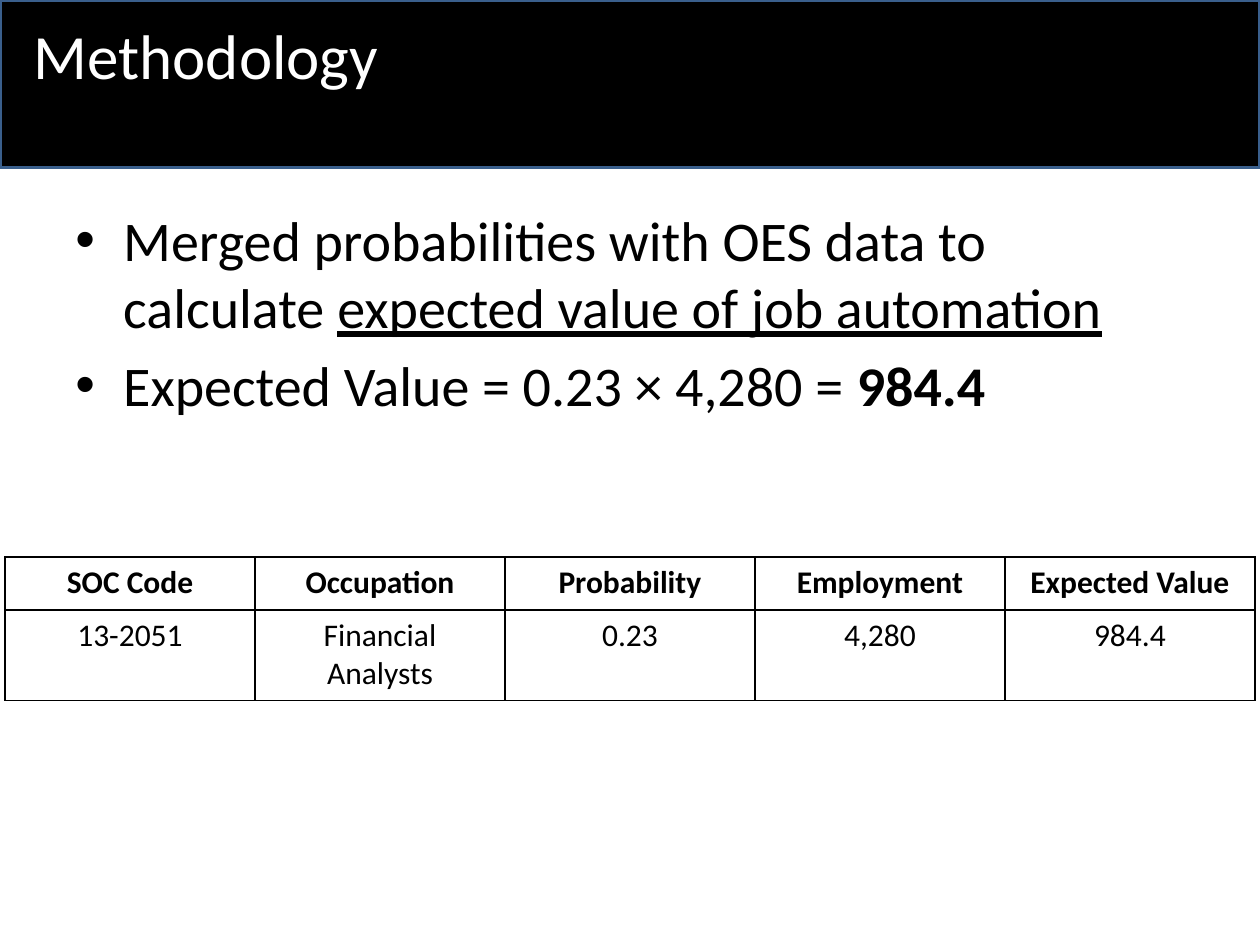
from dataclasses import dataclass

from lxml.etree import SubElement
from pptx import Presentation
from pptx.dml.color import RGBColor
from pptx.enum.shapes import MSO_SHAPE
from pptx.enum.text import MSO_ANCHOR, PP_ALIGN
from pptx.oxml.ns import qn
from pptx.util import Inches, Pt


@dataclass(frozen=True)
class Theme:
    font: str = "Calibri"
    black: RGBColor = RGBColor(0, 0, 0)
    white: RGBColor = RGBColor(255, 255, 255)
    band_line: RGBColor = RGBColor(0x3A, 0x5F, 0x8C)
    title_size: Pt = Pt(36)
    body_size: Pt = Pt(32)
    table_size: Pt = Pt(18)


THEME = Theme()

BULLETS = [
    [("Merged probabilities with OES data to calculate ", {}),
     ("expected value of job automation", {"underline": True})],
    [("Expected Value = 0.23 × 4,280 = ", {}), ("984.4", {"bold": True})],
]
TABLE_ROWS = [
    ["SOC Code", "Occupation", "Probability", "Employment", "Expected Value"],
    ["13-2051", "Financial Analysts", "0.23", "4,280", "984.4"],
]


def format_run(run, size, color, bold=None, underline=None):
    font = run.font
    font.name = THEME.font
    font.size = size
    font.color.rgb = color
    font.bold = bold
    font.underline = underline


def add_text_frame(slide, left, top, width, height):
    text_frame = slide.shapes.add_textbox(left, top, width, height).text_frame
    text_frame.word_wrap = True
    text_frame.vertical_anchor = MSO_ANCHOR.TOP
    return text_frame


def add_title_band(slide, left, top, width, height):
    band = slide.shapes.add_shape(MSO_SHAPE.RECTANGLE, left, top, width, height)
    band.shadow.inherit = False
    band.fill.solid()
    band.fill.fore_color.rgb = THEME.black
    band.line.color.rgb = THEME.band_line
    band.line.width = Pt(2)

    text_frame = add_text_frame(slide, left + Inches(0.17), top + Inches(0.08),
                                Inches(8.25), Inches(1.1))
    text_frame.text = "Methodology"
    format_run(text_frame.paragraphs[0].runs[0], THEME.title_size, THEME.white)


def add_bullet(paragraph):
    properties = paragraph._p.get_or_add_pPr()
    indent = Inches(0.38)
    properties.set("marL", str(indent))
    properties.set("indent", str(-indent))
    SubElement(properties, qn("a:buFont"), typeface="Arial")
    SubElement(properties, qn("a:buChar"), char="•")


def add_bullet_list(slide, left, top, width, height):
    text_frame = add_text_frame(slide, left, top, width, height)
    for index, parts in enumerate(BULLETS):
        paragraph = text_frame.add_paragraph() if index else text_frame.paragraphs[0]
        add_bullet(paragraph)
        if index:
            paragraph.space_before = Pt(6.4)
        for text, style in parts:
            run = paragraph.add_run()
            run.text = text
            format_run(run, THEME.body_size, THEME.black, **style)


def set_cell_borders(cell):
    properties = cell._tc.get_or_add_tcPr()
    for position, side in enumerate(("a:lnL", "a:lnR", "a:lnT", "a:lnB")):
        line = properties.makeelement(qn(side), {"w": str(Pt(1))})
        fill = SubElement(line, qn("a:solidFill"))
        SubElement(fill, qn("a:srgbClr"), val=str(THEME.black))
        properties.insert(position, line)


def add_example_table(slide, left, top, width, height):
    row_count, column_count = len(TABLE_ROWS), len(TABLE_ROWS[0])
    table = slide.shapes.add_table(row_count, column_count, left, top, width, height).table
    header_height = Inches(0.42)
    table.rows[0].height = header_height
    table.rows[1].height = height - header_height
    for row_index, values in enumerate(TABLE_ROWS):
        for column_index, value in enumerate(values):
            cell = table.cell(row_index, column_index)
            cell.fill.background()
            set_cell_borders(cell)
            cell.text_frame.text = value
            paragraph = cell.text_frame.paragraphs[0]
            paragraph.alignment = PP_ALIGN.CENTER
            format_run(paragraph.runs[0], THEME.table_size, THEME.black,
                       bold=row_index == 0)


def main():
    presentation = Presentation()
    presentation.slide_width = Inches(10)
    presentation.slide_height = Inches(7.5)
    slide = presentation.slides.add_slide(presentation.slide_layouts[6])
    add_title_band(slide, Inches(0), Inches(0), presentation.slide_width, Inches(1.33))
    add_bullet_list(slide, Inches(0.5), Inches(1.58), Inches(9), Inches(5.42))
    add_example_table(slide, Inches(0.04), Inches(4.42), Inches(9.92), Inches(1.14))
    presentation.save("out.pptx")


if __name__ == "__main__":
    main()
